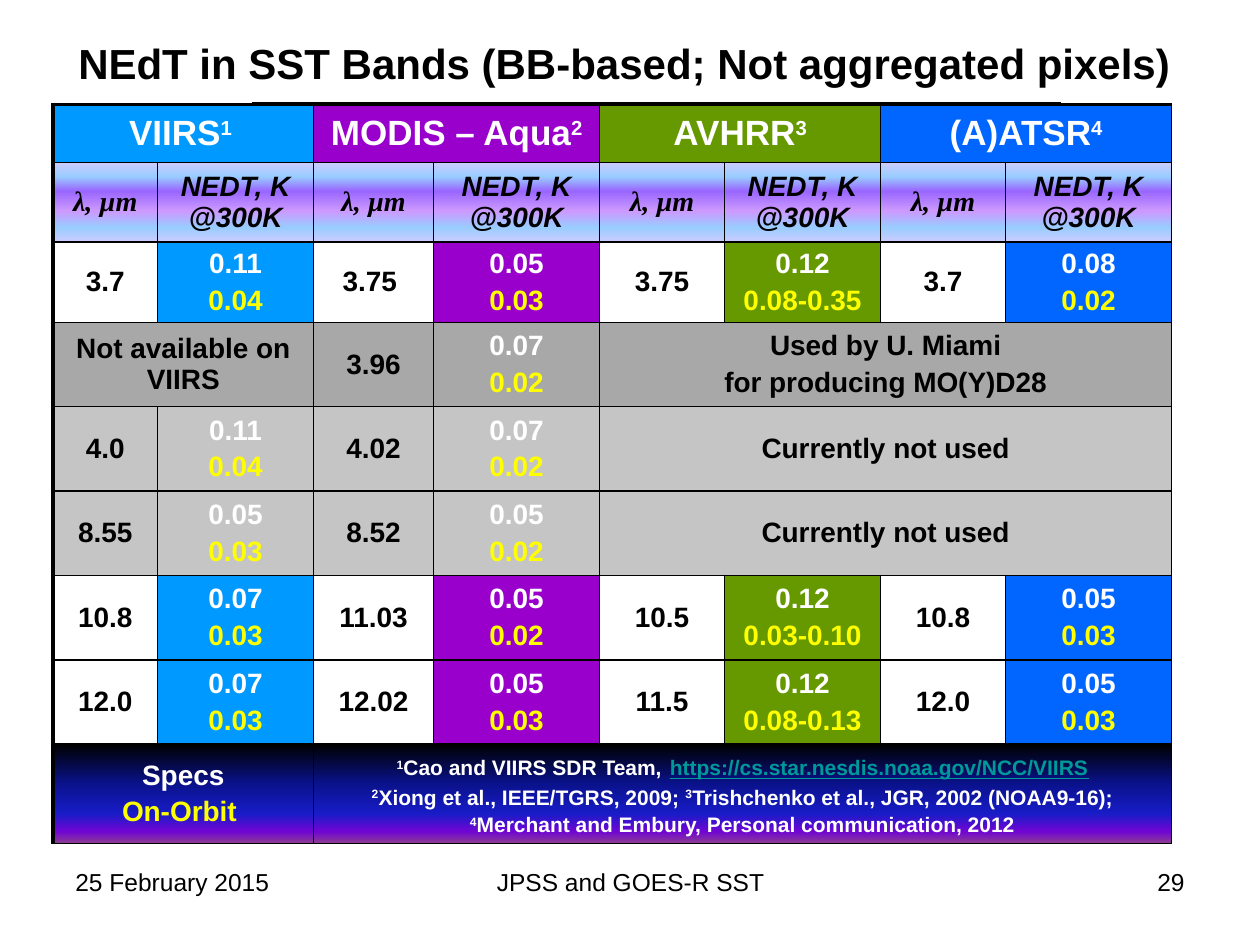
import pptx
import pptx.dml.color
import pptx.enum.shapes
import pptx.enum.text
import pptx.oxml
import pptx.oxml.ns
import pptx.util
from lxml import etree

Inches, Pt = pptx.util.Inches, pptx.util.Pt
ALIGN = pptx.enum.text.PP_ALIGN
MIDDLE = pptx.enum.text.MSO_ANCHOR.MIDDLE

COLORS = {
    "black": "000000", "white": "FFFFFF", "yellow": "FFFF00", "link": "009999",
    "blue": "0099FF", "purple": "9900CC", "green": "669900", "royal": "0066FF",
    "dark gray": "404040", "gray": "808080",
}
GRADIENTS = {
    "lavender": [(0, "CCCCFF"), (18, "99CCFF"), (36, "9966FF"),
                 (61, "CC99FF"), (82, "99CCFF"), (100, "CCCCFF")],
    "night": [(0, "000000"), (40, "0A128C"), (70, "181CC7"),
              (88, "7005D4"), (100, "8C3D91")],
}
GRAY_OPACITY = 45

COLUMN_WIDTHS = [0.83, 1.24, 0.95, 1.32, 0.99, 1.24, 0.99, 1.32]
ROW_HEIGHTS = [0.46, 0.63, 0.58] + [0.67] * 6

SENSORS = [("VIIRS", "1 ", "blue"), ("MODIS – Aqua", "2", "purple"),
           ("AVHRR", "3", "green"), ("(A)ATSR", "4", "royal")]
# Row fill, then (wavelength, spec, on-orbit) per sensor or (column span, lines)
BANDS = [
    (None, [("3.7", "0.11", "0.04"), ("3.75 ", "0.05", "0.03"),
            ("3.75", "0.12", "0.08-0.35"), ("3.7", "0.08", "0.02")]),
    ("dark gray", [(2, ["Not available on VIIRS"]), ("3.96", "0.07", "0.02"),
                   (4, ["Used by U. Miami", "for producing MO(Y)D28"])]),
    ("gray", [("4.0", "0.11", "0.04"), ("4.02", "0.07", "0.02"),
              (4, ["Currently not used"])]),
    ("gray", [("8.55", "0.05", "0.03"), ("8.52", "0.05", "0.02"),
              (4, ["Currently not used"])]),
    (None, [("10.8", "0.07", "0.03"), ("11.03", "0.05", "0.02"),
            ("10.5", "0.12", "0.03-0.10"), ("10.8", "0.05", "0.03")]),
    (None, [("12.0", "0.07", "0.03"), ("12.02", "0.05", "0.03"),
            ("11.5", "0.12", "0.08-0.13"), ("12.0", "0.05", "0.03")]),
]

NOTE = {"size": 12, "color": "white"}
RAISED = {**NOTE, "raised": True}
REFERENCES = [
    [("1", RAISED), ("Cao and VIIRS SDR Team,", NOTE), (" ", {"size": 16}),
     ("https://cs.star.nesdis.noaa.gov/NCC/VIIRS",
      {"size": 12, "color": "link", "underline": True})],
    [("2", RAISED), ("Xiong et al., IEEE/TGRS, 2009; ", NOTE), ("3", RAISED),
     ("Trishchenko et al., JGR, 2002 (NOAA9-16);", NOTE)],
    [("4", RAISED), ("Merchant and Embury, Personal communication, 2012", NOTE)],
]
# Text, (left, top, width, height), alignment, size, bold
LABELS = [
    ("NEdT in SST Bands (BB-based; Not aggregated pixels)",
     (0.33, 0.25, 9.25, 0.51), ALIGN.CENTER, 24, True),
    ("25 February 2015", (0.5, 6.83, 2.33, 0.52), ALIGN.LEFT, 14, False),
    ("29", (7.17, 6.83, 2.33, 0.52), ALIGN.RIGHT, 14, False),
    ("JPSS and GOES-R SST", (3.42, 6.83, 3.17, 0.52), ALIGN.CENTER, 14, False),
]


def rgb(name):
    return pptx.dml.color.RGBColor.from_string(COLORS[name])


def add_xml(parent, tag, **attributes):
    return etree.SubElement(parent, pptx.oxml.ns.qn("a:" + tag), attributes)


def format_run(run, size=16, color="black", font="Arial", bold=True,
               italic=False, underline=False, raised=False):
    run.font.size = Pt(size)
    run.font.name = font
    run.font.bold = bold
    run.font.italic = italic
    run.font.underline = underline
    run.font.color.rgb = rgb(color)
    if raised:
        run.font._element.set("baseline", "30000")


def write_cell(cell, paragraphs):
    """Fill a cell with paragraphs, each a list of (text, style) runs."""
    cell.vertical_anchor = MIDDLE
    frame = cell.text_frame
    for index, runs in enumerate(paragraphs):
        paragraph = frame.add_paragraph() if index else frame.paragraphs[0]
        paragraph.alignment = ALIGN.CENTER
        before = add_xml(paragraph._p.get_or_add_pPr(), "spcBef")
        add_xml(before, "spcPct", val="20000")
        for text, style in runs:
            run = paragraph.add_run()
            run.text = text
            format_run(run, **style)


def paint_cell(cell, fill):
    if fill in GRADIENTS:
        properties = cell._tc.get_or_add_tcPr()
        gradient = add_xml(properties, "gradFill", rotWithShape="1")
        stops = add_xml(gradient, "gsLst")
        for position, color in GRADIENTS[fill]:
            stop = add_xml(stops, "gs", pos=str(position * 1000))
            add_xml(stop, "srgbClr", val=color)
        add_xml(gradient, "lin", ang="5400000", scaled="1")
    elif fill:
        cell.fill.solid()
        cell.fill.fore_color.rgb = rgb(fill)
        if "gray" in fill:
            color = cell._tc.tcPr.find(".//" + pptx.oxml.ns.qn("a:srgbClr"))
            add_xml(color, "alpha", val=str(GRAY_OPACITY * 1000))
    else:
        cell.fill.background()


def border_cell(cell, row, column):
    widths = {"lnL": 1 if column else 2.25, "lnR": 1,
              "lnT": 1 if row else 2.25, "lnB": 1}
    properties = cell._tc.get_or_add_tcPr()
    for index, (tag, width) in enumerate(widths.items()):
        line = add_xml(properties, tag, w=str(Pt(width)))
        add_xml(add_xml(line, "solidFill"), "srgbClr", val=COLORS["black"])
        properties.insert(index, line)


def table_rows():
    """Return rows of (column span, fill, paragraphs)."""
    heading = {"size": 20, "color": "white"}
    rows = [[(2, fill, [[(name, heading), (mark, {**heading, "raised": True})]])
             for name, mark, fill in SENSORS]]
    rows.append([
        (1, "lavender", [[("λ, µm", {"font": "Times New Roman", "italic": True})]]),
        (1, "lavender", [[("NEDT, K @300K", {"italic": True})]]),
    ] * len(SENSORS))
    for row_fill, entries in BANDS:
        row = []
        for index, entry in enumerate(entries):
            if len(entry) == 2:
                span, lines = entry
                row.append((span, row_fill, [[(line, {})] for line in lines]))
                continue
            wavelength, spec, orbit = entry
            row.append((1, row_fill, [[(wavelength, {})]]))
            row.append((1, row_fill or SENSORS[index][2],
                        [[(spec, {"color": "white"})], [(orbit, {"color": "yellow"})]]))
        rows.append(row)
    legend = [[("Specs", {"color": "white"})], [("On-Orbit ", {"color": "yellow"})]]
    rows.append([(2, "night", legend), (6, "night", REFERENCES)])
    return rows


def add_band_table(slide):
    table = slide.shapes.add_table(
        len(ROW_HEIGHTS), len(COLUMN_WIDTHS), Inches(0.42), Inches(0.83),
        Inches(sum(COLUMN_WIDTHS)), Inches(sum(ROW_HEIGHTS))).table
    table.first_row = table.horz_banding = False
    for column, width in zip(table.columns, COLUMN_WIDTHS):
        column.width = Inches(width)
    for row, height in zip(table.rows, ROW_HEIGHTS):
        row.height = Inches(height)
    for row, cells in enumerate(table_rows()):
        start = 0
        for span, fill, paragraphs in cells:
            end = start + span
            if span > 1:
                table.cell(row, start).merge(table.cell(row, end - 1))
            write_cell(table.cell(row, start), paragraphs)
            for column in range(start, end):
                paint_cell(table.cell(row, column), fill)
                border_cell(table.cell(row, column), row, column)
            start = end


def main():
    presentation = pptx.Presentation()
    presentation.slide_width, presentation.slide_height = Inches(10), Inches(7.5)
    slide = presentation.slides.add_slide(presentation.slide_layouts[6])

    rule = slide.shapes.add_connector(
        pptx.enum.shapes.MSO_CONNECTOR.STRAIGHT,
        Inches(2), Inches(0.83), Inches(8.42), Inches(0.83))
    rule.line.color.rgb = rgb("black")
    rule.line.width = Pt(3)
    add_xml(rule._element.spPr, "effectLst")

    add_band_table(slide)

    for text, box, alignment, size, bold in LABELS:
        frame = slide.shapes.add_textbox(*map(Inches, box)).text_frame
        frame.word_wrap = True
        frame.text = text
        frame.paragraphs[0].alignment = alignment
        format_run(frame.paragraphs[0].runs[0], size=size, bold=bold)

    presentation.save("out.pptx")


if __name__ == "__main__":
    main()
